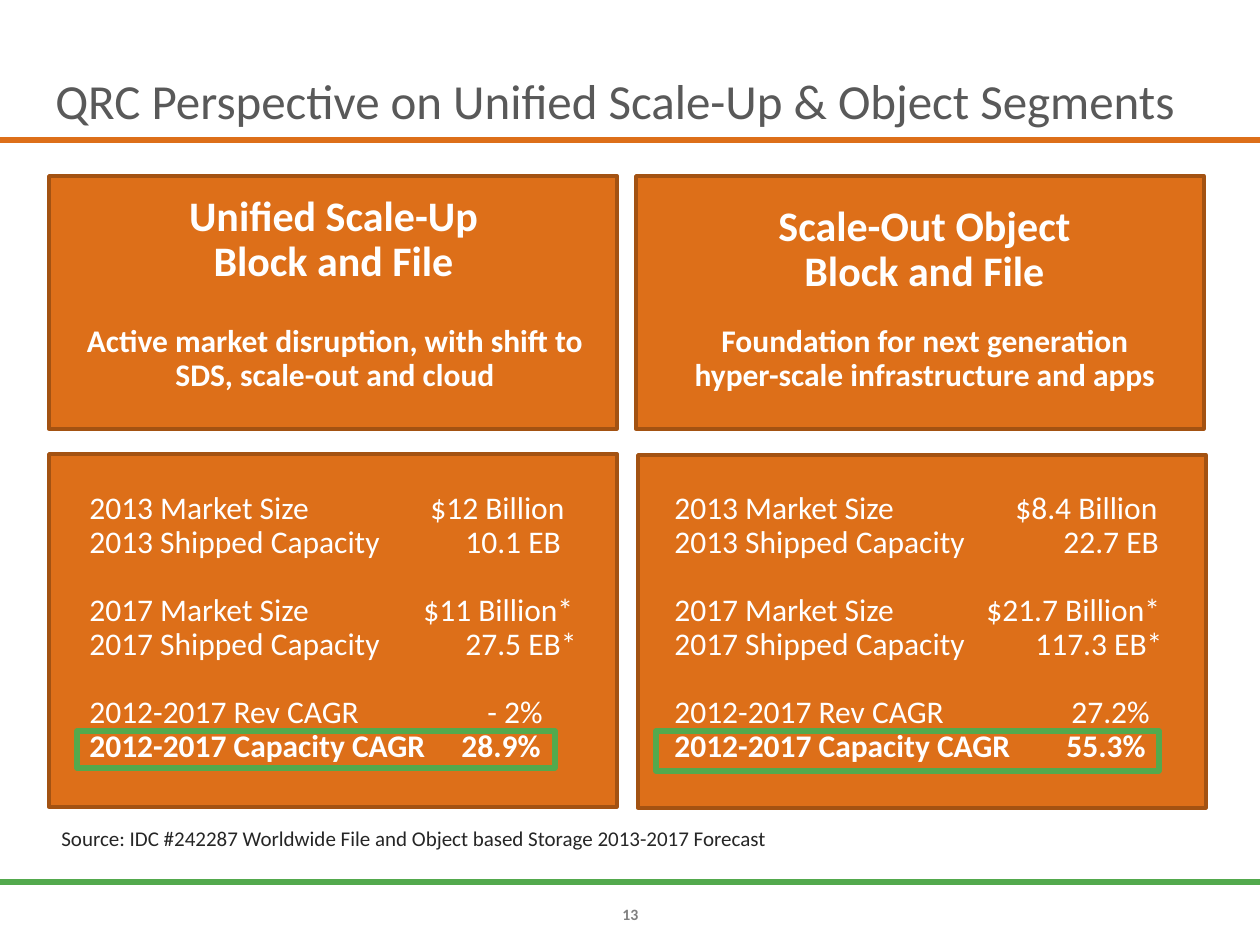
from dataclasses import dataclass

from lxml import etree
from pptx import Presentation
from pptx import util as u
from pptx.dml.color import RGBColor
from pptx.enum import shapes, text
from pptx.oxml import ns

EMU_PER_PX = 914400 / 126


@dataclass(frozen=True)
class Theme:
    font: str = "Calibri"
    orange: str = "DD6F19"
    dark_orange: str = "A35212"
    green: str = "53A94D"
    white: str = "FFFFFF"
    title_grey: str = "595959"
    source_grey: str = "262626"
    number_grey: str = "808080"
    title_size: int = 28
    heading_size: int = 24
    body_size: int = 18
    source_size: int = 12
    number_size: int = 9
    rule_width: int = 3
    border_width: int = 2
    line_spacing: float = 0.9
    group_gap: float = 19.5


THEME = Theme()

# Each group of rows: label, value, tab position of the value in px
SEGMENTS = [
    {
        "heading": ["Unified Scale-Up", "Block and File"],
        "tagline": "Active market disruption, with shift to SDS, scale-out and cloud",
        "stats": [
            [("2013 Market Size", "$12 Billion", 341),
             ("2013 Shipped Capacity", "10.1 EB", 376)],
            [("2017 Market Size", "$11 Billion*", 334),
             ("2017 Shipped Capacity", "27.5 EB*", 376)],
            [("2012-2017 Rev CAGR", "- 2%", 398),
             ("2012-2017 Capacity CAGR", "28.9%", 372)],
        ],
        "top_panel": (49, 176, 568, 253),
        "bottom_panel": (49, 454, 568, 353),
        "heading_box": (111, 189, 445, 105),
        "tagline_box": (74, 319, 522, 82),
        "stats_box": (77, 486, 522, 289),
        "highlight": (77, 731, 478, 37),
    },
    {
        "heading": ["Scale-Out Object", "Block and File"],
        "tagline": "Foundation for next generation hyper-scale infrastructure and apps",
        "stats": [
            [("2013 Market Size", "$8.4 Billion", 341),
             ("2013 Shipped Capacity", "22.7 EB", 389)],
            [("2017 Market Size", "$21.7 Billion*", 312),
             ("2017 Shipped Capacity", "117.3 EB*", 361)],
            [("2012-2017 Rev CAGR", "27.2%", 397),
             ("2012-2017 Capacity CAGR", "55.3%", 392)],
        ],
        "top_panel": (636, 176, 568, 253),
        "bottom_panel": (638, 455, 568, 353),
        "heading_box": (702, 199, 445, 105),
        "tagline_box": (664, 319, 522, 82),
        "stats_box": (662, 486, 522, 289),
        "highlight": (656, 731, 503, 40),
    },
]


def px(length):
    return u.Emu(round(length * EMU_PER_PX))


def rgb(colour):
    return RGBColor.from_string(colour)


def add_rule(slide, y, colour):
    rule = slide.shapes.add_connector(
        shapes.MSO_CONNECTOR.STRAIGHT, 0, px(y), px(1260), px(y))
    rule.line.color.rgb = rgb(colour)
    rule.line.width = u.Pt(THEME.rule_width)
    etree.SubElement(rule._element.spPr, ns.qn("a:effectLst"))


def add_box(slide, place, border, width, fill=None):
    box = slide.shapes.add_shape(
        shapes.MSO_SHAPE.RECTANGLE, *map(px, place))
    box.shadow.inherit = False
    if fill:
        box.fill.solid()
        box.fill.fore_color.rgb = rgb(fill)
    else:
        box.fill.background()
    box.line.color.rgb = rgb(border)
    box.line.width = u.Pt(width)


def add_frame(slide, place, anchor=text.MSO_ANCHOR.TOP):
    frame = slide.shapes.add_textbox(*map(px, place)).text_frame
    frame.word_wrap = True
    frame.vertical_anchor = anchor
    return frame


def style(paragraph, size, colour, bold=False, centred=False):
    paragraph.line_spacing = THEME.line_spacing
    if centred:
        paragraph.alignment = text.PP_ALIGN.CENTER
    font = paragraph.font
    font.name = THEME.font
    font.size = u.Pt(size)
    font.bold = bold
    font.color.rgb = rgb(colour)


def write(frame, lines, *look, **options):
    frame.text = "\n".join(lines)
    for paragraph in frame.paragraphs:
        style(paragraph, *look, **options)


def add_tab(paragraph, position):
    tabs = etree.SubElement(
        paragraph._p.get_or_add_pPr(), ns.qn("a:tabLst"))
    etree.SubElement(
        tabs, ns.qn("a:tab"), pos=str(px(position)), algn="l")


def add_stats(slide, place, groups):
    frame = add_frame(slide, place)
    rows = [(row, number > 0 and row is group[0])
            for number, group in enumerate(groups) for row in group]
    frame.text = "\n".join(f"{label}\t{value}" for (label, value, _), _ in rows)
    for paragraph, ((_, _, position), starts_group) in zip(frame.paragraphs, rows):
        add_tab(paragraph, position)
        style(paragraph, THEME.body_size, THEME.white,
              bold=paragraph is not None and position == rows[-1][0][2])
        if starts_group:
            paragraph.space_before = u.Pt(THEME.group_gap)


def add_segment(slide, segment):
    for panel in ("top_panel", "bottom_panel"):
        add_box(slide, segment[panel], THEME.dark_orange,
                THEME.border_width, THEME.orange)
    write(add_frame(slide, segment["heading_box"]), segment["heading"],
          THEME.heading_size, THEME.white, bold=True, centred=True)
    write(add_frame(slide, segment["tagline_box"]), [segment["tagline"]],
          THEME.body_size, THEME.white, bold=True, centred=True)
    add_stats(slide, segment["stats_box"], segment["stats"])
    add_box(slide, segment["highlight"], THEME.green, THEME.rule_width)


def main():
    deck = Presentation()
    deck.slide_width, deck.slide_height = px(1260), px(945)
    slide = deck.slides.add_slide(deck.slide_layouts[6])

    # Page furniture
    add_rule(slide, 882, THEME.green)
    add_rule(slide, 140, THEME.orange)
    page_number = add_frame(slide, (604, 905, 53, 19), text.MSO_ANCHOR.BOTTOM)
    page_number.margin_left = page_number.margin_right = 0
    page_number.margin_top = page_number.margin_bottom = 0
    write(page_number, ["13"], THEME.number_size, THEME.number_grey,
          bold=True, centred=True)

    # Title
    write(add_frame(slide, (43, 73, 1174, 63), text.MSO_ANCHOR.BOTTOM),
          ["QRC Perspective on Unified Scale-Up & Object Segments"],
          THEME.title_size, THEME.title_grey)

    # Market segments
    for segment in SEGMENTS:
        add_segment(slide, segment)

    # Source
    write(add_frame(slide, (49, 822, 1157, 37)),
          ["Source: IDC #242287 Worldwide File and Object based Storage 2013-2017 Forecast"],
          THEME.source_size, THEME.source_grey)

    deck.save("out.pptx")


if __name__ == "__main__":
    main()
